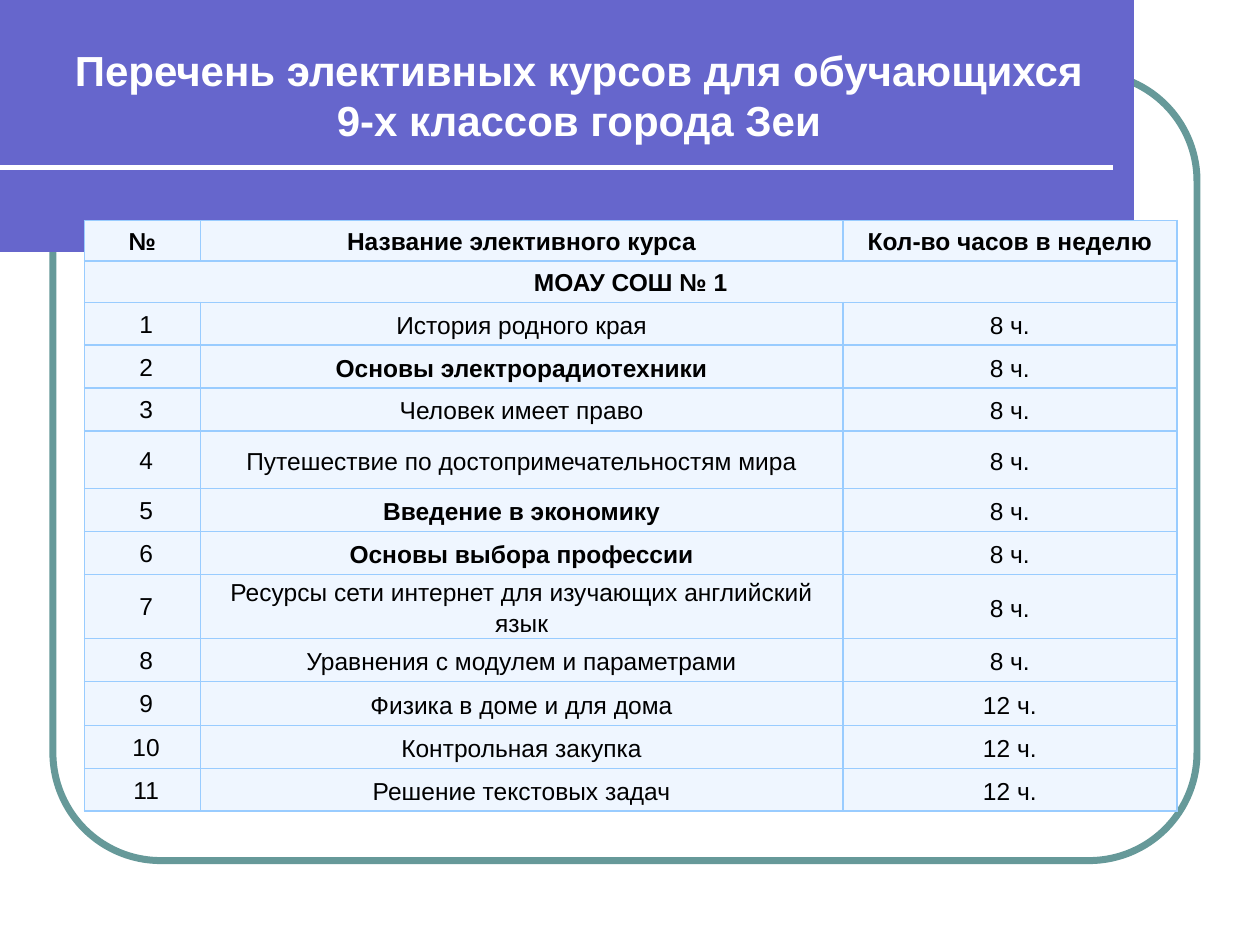
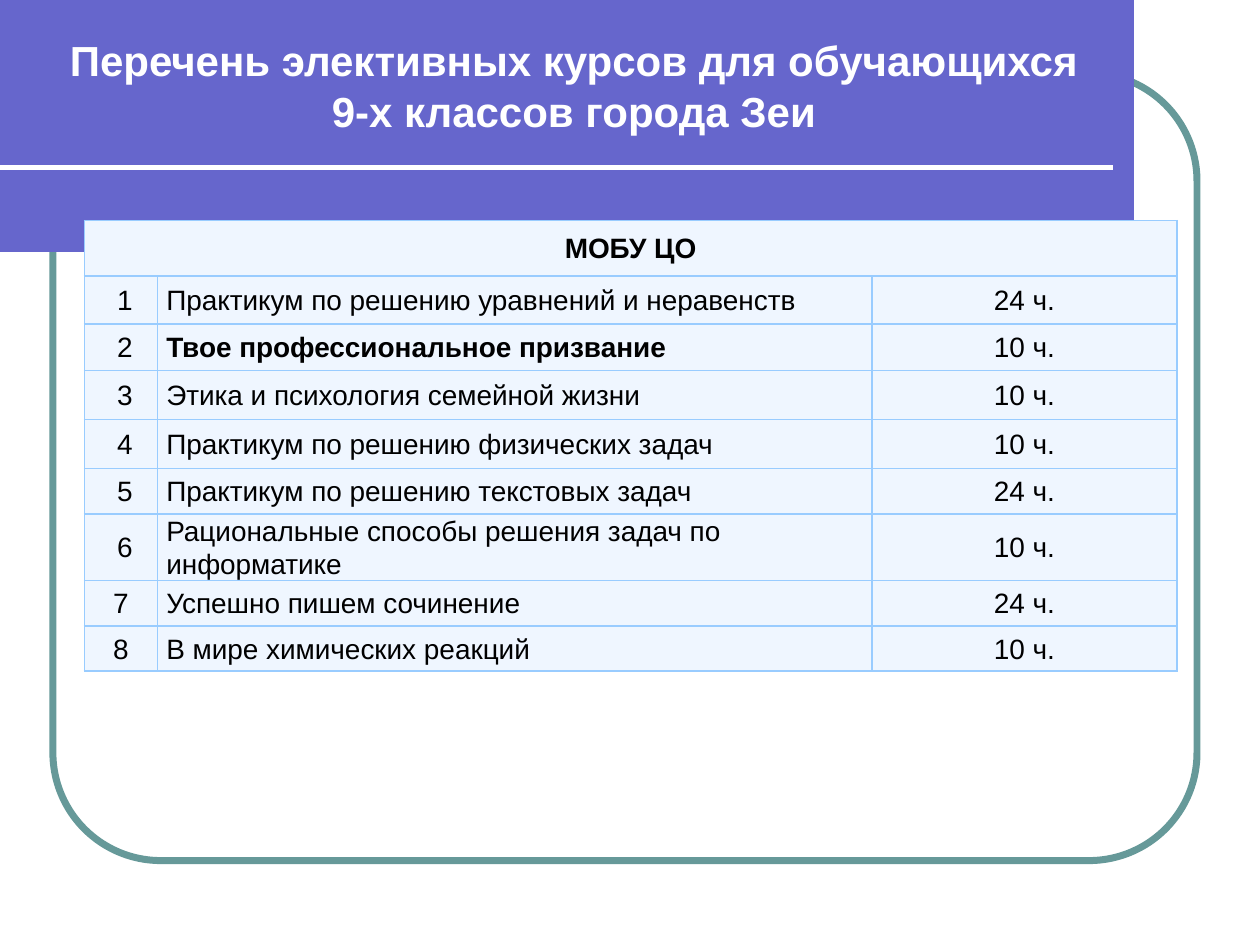
import math

from lxml import etree
from pptx import Presentation
from pptx.dml.color import RGBColor
from pptx.enum.shapes import MSO_CONNECTOR, MSO_SHAPE
from pptx.enum.text import MSO_ANCHOR, MSO_AUTO_SIZE, PP_ALIGN
from pptx.oxml import parse_xml
from pptx.oxml.ns import nsdecls, qn
from pptx.util import Inches, Pt

COLORS = {"frame": "669999", "band": "6666CC", "white": "FFFFFF",
          "border": "99CCFF", "cell": "EFF6FF", "text": "000000"}
FONT = "Arial"
CENTER, LEFT = PP_ALIGN.CENTER, PP_ALIGN.LEFT
MIDDLE, NO_FIT = MSO_ANCHOR.MIDDLE, MSO_AUTO_SIZE.NONE
ROUND_RECT, STRAIGHT = MSO_SHAPE.ROUNDED_RECTANGLE, MSO_CONNECTOR.STRAIGHT

FRAME_BOX = (0.42, 0.58, 9.08, 6.25)
BAND_BOX = (0, 0.17, 9.33, 1.33)
TABLE_BOX = (0.67, 1.75, 8.67)
TITLE = "Перечень элективных курсов для обучающихся\v9-х классов города Зеи"

SLIDES = [
    {
        "title_box": (0.21, 0.25, 8.77, 1),
        "title_bottom": 0.05,
        "header": ("№", "Название элективного курса", "Кол-во часов в неделю"),
        "school": "МОАУ СОШ № 1",
        "courses": [
            ("История родного края", 8),
            ("Основы электрорадиотехники", 8),
            ("Человек имеет право", 8),
            ("Путешествие по достопримечательностям мира", 8),
            ("Введение в экономику", 8),
            ("Основы выбора профессии", 8),
            ("Ресурсы сети интернет для изучающих английский язык", 8),
            ("Уравнения с модулем и параметрами", 8),
            ("Физика в доме и для дома", 12),
            ("Контрольная закупка", 12),
            ("Решение текстовых задач", 12),
        ],
        "bold": (2, 5, 6),
        "indented": 11,
        "cols": (0.92, 5.1, 2.65),
        "rows": (0.32, 0.33, 0.34, 0.34, 0.34, 0.46, 0.34, 0.34, 0.51,
                 0.34, 0.35, 0.34, 0.34),
        "size": 14,
        "spacing": 1.15,
        "name_align": CENTER,
    },
    {
        "title_box": (0.17, 0.5, 8.77, 0.75),
        "title_bottom": 0.45,
        "header": None,
        "school": "МОБУ ЦО",
        "courses": [
            ("Практикум по решению уравнений и неравенств", 24),
            ("Твое профессиональное призвание", 10),
            ("Этика и психология семейной жизни", 10),
            ("Практикум по решению физических задач", 10),
            ("Практикум по решению текстовых задач", 24),
            ("Рациональные способы решения задач по информатике", 10),
            ("Успешно пишем сочинение", 24),
            ("В мире химических реакций", 10),
        ],
        "bold": (2,),
        "indented": 6,
        "cols": (0.58, 5.67, 2.42),
        "rows": (0.44, 0.38, 0.37, 0.39, 0.39, 0.36, 0.37, 0.36, 0.36),
        "size": 16,
        "spacing": 1.07,
        "name_align": LEFT,
    },
]


def rgb(name):
    """Return the named colour."""
    return RGBColor.from_string(COLORS[name])


def apply(target, values):
    """Set attributes from a dict of format values."""
    for name, value in values.items():
        setattr(target, name, value)


def style_font(font, size, color, bold):
    """Format a font."""
    apply(font, {"name": FONT, "size": Pt(size), "bold": bold})
    font.color.rgb = rgb(color)


def add_frame(slide, box):
    """Draw the rounded outline around the content."""
    sp = slide.shapes.add_shape(ROUND_RECT, *map(Inches, box))
    sp.shadow.inherit = False
    sp.adjustments[0] = 0.137
    sp.fill.background()
    sp.line.color.rgb = rgb("frame")
    sp.line.width = Pt(4)


def add_band(slide, box):
    """Draw the title band with its round right end and the rule on it."""
    x, y, w, h = box
    radius = h / 2
    cx, cy = x + w - radius, y + radius
    angles = [math.radians(a) for a in range(-90, 91, 3)]
    arc = [(cx + radius * math.cos(a), cy + radius * math.sin(a)) for a in angles]
    builder = slide.shapes.build_freeform(x, y, scale=Inches(1))
    builder.add_line_segments(arc + [(x, y + h)], close=True)
    sp = builder.convert_to_shape()
    sp.shadow.inherit = False
    sp.fill.solid()
    sp.fill.fore_color.rgb = rgb("band")
    sp.line.fill.background()

    rule_y = Inches(y + h - 0.17)
    rule = slide.shapes.add_connector(STRAIGHT, Inches(x), rule_y,
                                      Inches(x + w - 0.5), rule_y)
    rule.line.color.rgb = rgb("white")
    rule.line.width = Pt(3)
    etree.SubElement(rule._element.spPr, qn("a:effectLst"))


def set_title(slide, box, bottom):
    """Place the title placeholder on top of the band."""
    title = slide.shapes.title
    slide.shapes._spTree.append(title._element)
    apply(title, dict(zip(("left", "top", "width", "height"), map(Inches, box))))
    tf = title.text_frame
    tf.text = TITLE
    apply(tf, {"word_wrap": True, "auto_size": NO_FIT, "vertical_anchor": MIDDLE,
               "margin_bottom": Inches(bottom)})
    p = tf.paragraphs[0]
    p.alignment = CENTER
    for r in p.runs:
        style_font(r.font, 24, "white", True)


def style_cell(cell):
    """Give a cell its borders, fill and margins."""
    tc_pr = cell._tc.get_or_add_tcPr()
    for side in "LRTB":
        tc_pr.append(parse_xml(
            f'<a:ln{side} {nsdecls("a")} w="12700"><a:solidFill>'
            f'<a:srgbClr val="{COLORS["border"]}"/></a:solidFill></a:ln{side}>'))
    cell.fill.solid()
    cell.fill.fore_color.rgb = rgb("cell")
    apply(cell, {"margin_left": Inches(0.07), "margin_right": Inches(0.07),
                 "margin_top": 0, "margin_bottom": 0, "vertical_anchor": MIDDLE})


def write_cell(cell, text, size, bold=False, align=CENTER, spacing=1.07, after=8):
    """Write one formatted paragraph into a cell."""
    p = cell.text_frame.paragraphs[0]
    apply(p, {"alignment": align, "line_spacing": spacing, "space_after": Pt(after)})
    r = p.add_run()
    r.text = text
    style_font(r.font, size, "text", bold)


def add_course_table(slide, box, data):
    """Build the table of courses under the school name."""
    x, y, w = box
    size, spacing = data["size"], data["spacing"]
    table = slide.shapes.add_table(
        len(data["rows"]), len(data["cols"]), Inches(x), Inches(y), Inches(w),
        Inches(sum(data["rows"]))).table
    apply(table, {"first_row": False, "horz_banding": False})
    for col, width in zip(table.columns, data["cols"]):
        col.width = Inches(width)
    for row, height in zip(table.rows, data["rows"]):
        row.height = Inches(height)
    for cell in table.iter_cells():
        style_cell(cell)

    school_row = 0
    if data["header"]:
        for col, text in enumerate(data["header"]):
            write_cell(table.cell(0, col), text, size, True)
        school_row = 1
    school = table.cell(school_row, 0)
    school.merge(table.cell(school_row, 2))
    write_cell(school, data["school"], size, True, after=8 if data["header"] else 0)

    for number, (name, hours) in enumerate(data["courses"], 1):
        cells = [table.cell(school_row + number, col) for col in range(3)]
        if number <= data["indented"]:
            cells[0].margin_left = Inches(0.13)
        write_cell(cells[0], str(number), size, after=0)
        write_cell(cells[1], name, size, number in data["bold"],
                   data["name_align"], spacing)
        write_cell(cells[2], f"{hours} ч.", size, spacing=spacing)


def add_course_slide(prs, data):
    """Add one slide with the frame, band, table and title."""
    slide = prs.slides.add_slide(prs.slide_layouts[5])
    add_frame(slide, FRAME_BOX)
    add_band(slide, BAND_BOX)
    add_course_table(slide, TABLE_BOX, data)
    set_title(slide, data["title_box"], data["title_bottom"])


def main():
    """Build and save the presentation."""
    prs = Presentation()
    prs.slide_width, prs.slide_height = Inches(10), Inches(7.5)
    for data in SLIDES:
        add_course_slide(prs, data)
    prs.save("out.pptx")


if __name__ == "__main__":
    main()
